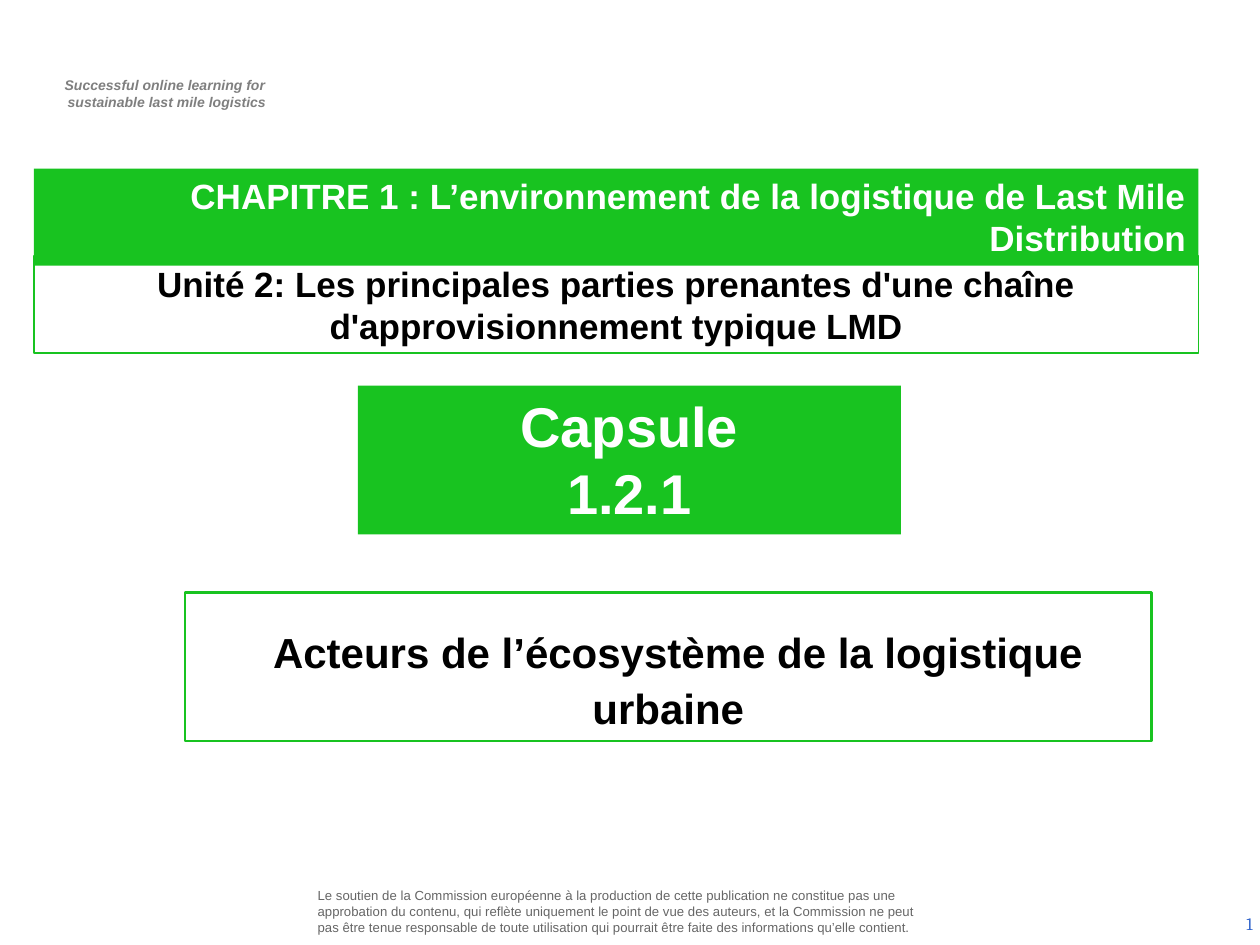
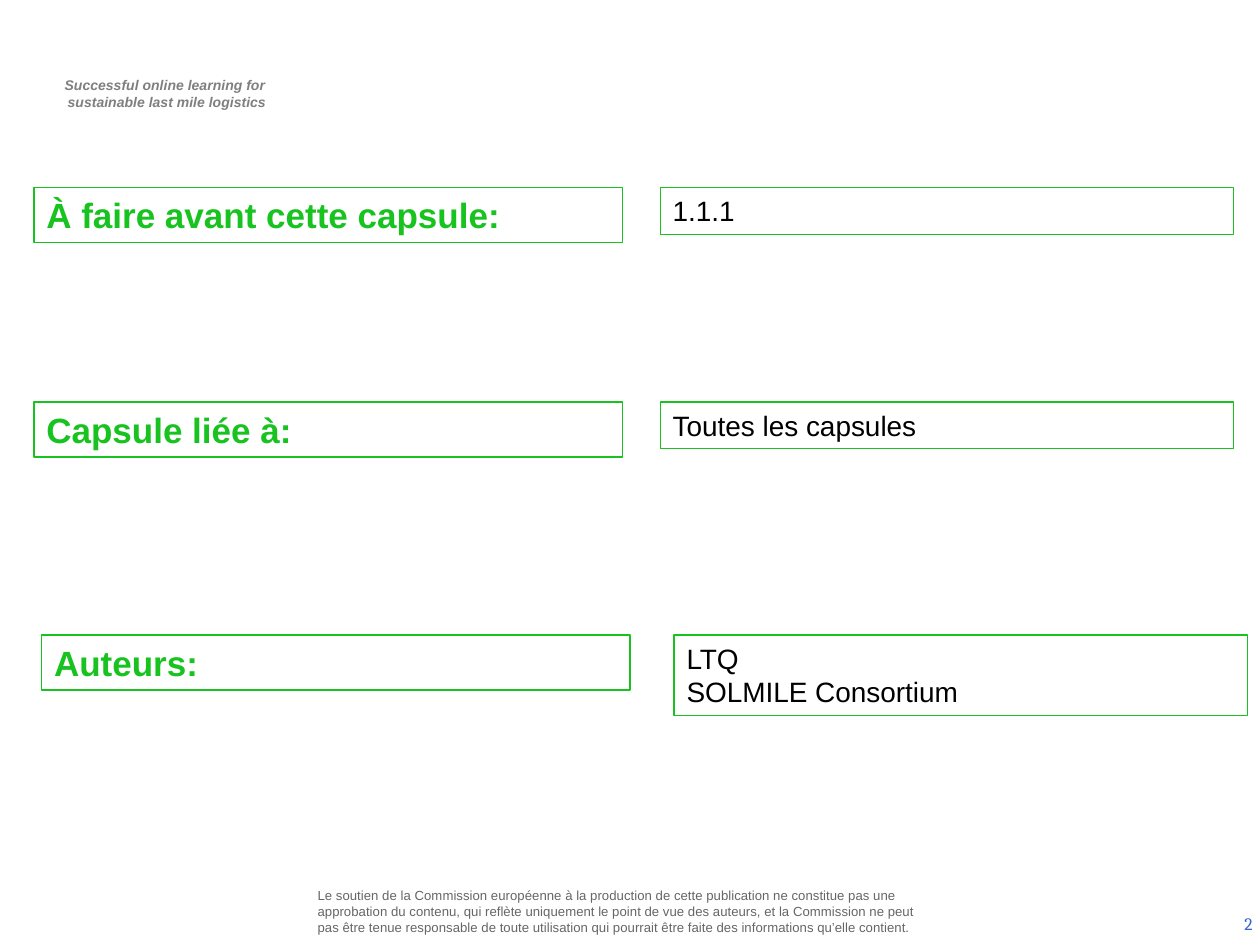
from pptx import Presentation
from pptx.dml.color import RGBColor
from pptx.enum.shapes import MSO_SHAPE
from pptx.enum.text import MSO_ANCHOR as Anchor, MSO_AUTO_SIZE as AutoSize, PP_ALIGN as Align
from pptx.util import Pt

COLORS = {
    "green": "18C320",
    "white": "FFFFFF",
    "black": "000000",
    "tagline": "7F7F7F",
    "disclaimer": "666666",
    "number": "3366CC",
}
TAGLINE = ["Successful online learning for ", "sustainable last mile logistics"]
DISCLAIMER = (
    "Le soutien de la Commission européenne à la production de cette publication "
    "ne constitue pas une approbation du contenu, qui reflète uniquement le point de vue "
    "des auteurs, et la Commission ne peut pas être tenue responsable de toute utilisation "
    "qui pourrait être faite des informations qu’elle contient."
)


def write(shape, lines, size, color, bold=False, italic=False, align=Align.LEFT,
          font="Arial", anchor=Anchor.TOP, inset=(7.2, 3.6)):
    frame = shape.text_frame
    frame.word_wrap = True
    frame.vertical_anchor = anchor
    frame.auto_size = AutoSize.SHAPE_TO_FIT_TEXT if anchor == Anchor.TOP else AutoSize.NONE
    frame.margin_left = frame.margin_right = Pt(inset[0])
    frame.margin_top = frame.margin_bottom = Pt(inset[1])
    for index, line in enumerate(lines):
        paragraph = frame.paragraphs[0] if index == 0 else frame.add_paragraph()
        paragraph.alignment = align
        run = paragraph.add_run()
        run.text = line
        run.font.name = font
        run.font.size = Pt(size)
        run.font.bold = bold
        run.font.italic = italic
        run.font.color.rgb = RGBColor.from_string(COLORS[color])
    return frame


def add_panel(slide, left, top, width, height, fill=None, line=None):
    panel = slide.shapes.add_shape(
        MSO_SHAPE.RECTANGLE, Pt(left), Pt(top), Pt(width), Pt(height))
    panel.shadow.inherit = False
    if fill:
        panel.fill.solid()
        panel.fill.fore_color.rgb = RGBColor.from_string(COLORS[fill])
    else:
        panel.fill.background()
    if line:
        panel.line.color.rgb = RGBColor.from_string(COLORS["green"])
        panel.line.width = Pt(line)
    else:
        panel.line.fill.background()
    return panel


deck = Presentation()
deck.slide_width, deck.slide_height = Pt(720), Pt(540)

for page in (1, 2):
    slide = deck.slides.add_slide(deck.slide_layouts[6])
    tagline = slide.shapes.add_textbox(Pt(20.9), Pt(40.3), Pt(146.2), Pt(26.6))
    frame = write(tagline, TAGLINE, 8, "tagline", bold=True, italic=True, align=Align.CENTER)
    for paragraph in frame.paragraphs:
        paragraph._p.get_or_add_pPr().set("marL", str(Pt(2.9)))

    disclaimer = slide.shapes.add_textbox(Pt(178.6), Pt(506.2), Pt(355), Pt(28.8))
    write(disclaimer, [DISCLAIMER], 7.5, "disclaimer", anchor=Anchor.MIDDLE, inset=(2.9, 2.9))

    number = slide.shapes.add_textbox(Pt(555.1), Pt(513.4), Pt(167.8), Pt(28.8))
    frame = write(number, [str(page)], 10, "number", align=Align.RIGHT,
                  font="Cambria", anchor=Anchor.MIDDLE)
    field = frame.paragraphs[0].runs[0]._r
    field.tag = field.tag.replace("}r", "}fld")
    field.set("id", "{B6F15528-21DE-4FAA-801E-634DDDAF4B2B}")
    field.set("type", "slidenum")

cover, summary = deck.slides

capsule = add_panel(cover, 204.5, 220.3, 310.3, 85, fill="green")
write(capsule, ["Capsule", "1.2.1"], 32, "white", bold=True, align=Align.CENTER)

topic = add_panel(cover, 105.8, 338.4, 552.2, 85, line=1.5)
frame = write(topic, [" "], 40, "black", bold=True, align=Align.CENTER)
subject = frame.paragraphs[0].add_run()
subject.text = "Acteurs de l’écosystème de la logistique urbaine"
subject.font.name = "Arial"
subject.font.size = Pt(24)
subject.font.bold = True
subject.font.color.rgb = RGBColor.from_string(COLORS["black"])

chapter = add_panel(cover, 19.4, 96.3, 665.5, 55.6, fill="green")
write(chapter, ["CHAPITRE 1 : L’environnement de la logistique de Last Mile Distribution"],
      20, "white", bold=True, align=Align.RIGHT)

unit = add_panel(cover, 19.4, 146.2, 665.5, 55.6, line=0.75)
write(unit, ["Unité 2: Les principales parties prenantes d'une chaîne "
             "d'approvisionnement typique LMD"],
      20, "black", bold=True, align=Align.CENTER)

DETAILS = [
    (107.3, 19.4, "À faire avant cette capsule:", 377.3, ["1.1.1"]),
    (229.7, 19.4, "Capsule liée à:", 377.3, ["Toutes les capsules"]),
    (362.9, 23.8, "Auteurs:", 385.2, ["LTQ", "SOLMILE Consortium"]),
]
for top, label_left, label, value_left, values in DETAILS:
    label_panel = add_panel(summary, label_left, top, 336.2, 31.5, fill="white", line=0.75)
    write(label_panel, [label], 20, "green", bold=True)
    value_height = 26.7 + 19.4 * (len(values) - 1)
    value_panel = add_panel(summary, value_left, top, 327.6, value_height, fill="white", line=0.75)
    write(value_panel, values, 16, "black")

deck.save("out.pptx")
